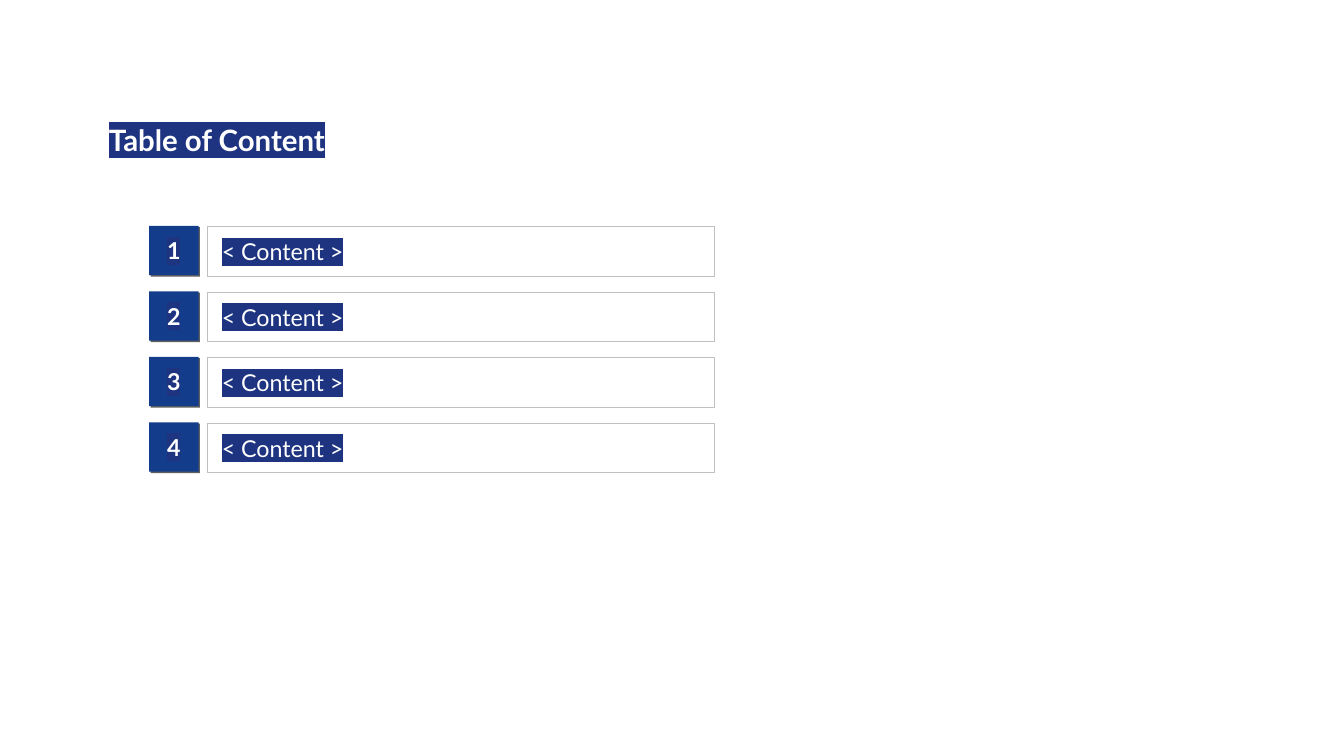
import dataclasses

import lxml.etree
import pptx
import pptx.dml.color
import pptx.enum.shapes
import pptx.enum.text
import pptx.oxml.ns
import pptx.shapes.autoshape
import pptx.shapes.group
import pptx.slide
import pptx.text.text
import pptx.util

PX = 9144  # EMU, at 100 px to the inch
FONT = "Lato"
WHITE = "FFFFFF"
HIGHLIGHT = "1E3480"
BADGE_FILL = "133C8B"
BADGE_SHADOW = "5F5F5F"
FRAME_LINE = "C0C0C0"

ROW_TOP = 224
ROW_PITCH = 65
ROW_HEIGHT = 49
BADGE_LEFT = 148
FRAME_LEFT = 206
FRAME_WIDTH = 503

ALIGN = pptx.enum.text.PP_ALIGN
ANCHOR = pptx.enum.text.MSO_ANCHOR


@dataclasses.dataclass
class Entry:
    number: str
    label: str


ENTRIES = [Entry(str(number), "< Content >") for number in range(1, 5)]


def px(length: int) -> pptx.util.Emu:
    return pptx.util.Emu(length * PX)


def rgb(color: str) -> pptx.dml.color.RGBColor:
    return pptx.dml.color.RGBColor.from_string(color)


def add_color_element(parent: lxml.etree._Element, tag: str, color: str,
                      **attributes: str) -> lxml.etree._Element:
    """Append an element that holds one sRGB colour."""
    element = lxml.etree.SubElement(parent, pptx.oxml.ns.qn(tag), attributes)
    lxml.etree.SubElement(element, pptx.oxml.ns.qn("a:srgbClr"), val=color)
    return element


def write(frame: pptx.text.text.TextFrame, text: str, *, size: float,
          bold: bool = False, align: ALIGN = ALIGN.LEFT,
          anchor: ANCHOR = ANCHOR.MIDDLE, wrap: bool = False,
          line_spacing: float = 1.0,
          margins: tuple[int, int, int, int] = (10, 5, 10, 5)) -> None:
    """Write one highlighted paragraph; margins are left, top, right, bottom."""
    frame.auto_size = pptx.enum.text.MSO_AUTO_SIZE.NONE
    frame.word_wrap = wrap
    frame.vertical_anchor = anchor
    (frame.margin_left, frame.margin_top,
     frame.margin_right, frame.margin_bottom) = map(px, margins)
    para = frame.paragraphs[0]
    para.alignment = align
    para.line_spacing = line_spacing
    span = para.add_run()
    span.text = text
    span.font.size = pptx.util.Pt(size)
    span.font.bold = bold
    span.font.color.rgb = rgb(WHITE)
    add_color_element(span.font._element, "a:highlight", HIGHLIGHT)
    span.font.name = FONT


def add_box(group: pptx.shapes.group.GroupShape, left: int, top: int,
            width: int) -> pptx.shapes.autoshape.Shape:
    box = group.shapes.add_shape(
        pptx.enum.shapes.MSO_SHAPE.RECTANGLE,
        px(left), px(top), px(width), px(ROW_HEIGHT))
    box.shadow.inherit = False
    return box


def add_entry(page: pptx.slide.Slide, entry: Entry, top: int) -> None:
    group = page.shapes.add_group_shape()

    frame = add_box(group, FRAME_LEFT, top + 1, FRAME_WIDTH)
    frame.fill.background()
    frame.line.color.rgb = rgb(FRAME_LINE)
    frame.line.width = pptx.util.Pt(0.5)
    write(frame.text_frame, entry.label, size=16.6, margins=(14, 5, 5, 5))

    badge = add_box(group, BADGE_LEFT, top, ROW_HEIGHT)
    badge.fill.solid()
    badge.fill.fore_color.rgb = rgb(BADGE_FILL)
    badge.line.fill.background()
    effects = badge._element.spPr.find(pptx.oxml.ns.qn("a:effectLst"))
    add_color_element(effects, "a:outerShdw", BADGE_SHADOW, blurRad="0",
                      dist=str(pptx.util.Pt(1.4)), dir="2700000",
                      algn="ctr", rotWithShape="0")
    write(badge.text_frame, entry.number, size=16.6, bold=True,
          align=ALIGN.CENTER, margins=(7, 4, 7, 4))


def place_title(page: pptx.slide.Slide, text: str) -> None:
    title = page.shapes.title
    title.left, title.top, title.width, title.height = map(
        px, (98, 120, 796, 55))
    write(title.text_frame, text, size=21, bold=True, anchor=ANCHOR.TOP,
          wrap=True, line_spacing=0.9)


def main() -> None:
    deck = pptx.Presentation()
    deck.slide_width, deck.slide_height = px(1333), px(750)
    page = deck.slides.add_slide(deck.slide_layouts.get_by_name("Title Only"))
    place_title(page, "Table of Content")
    for index, entry in enumerate(ENTRIES):
        add_entry(page, entry, ROW_TOP + index * ROW_PITCH)
    deck.save("out.pptx")


if __name__ == "__main__":
    main()
